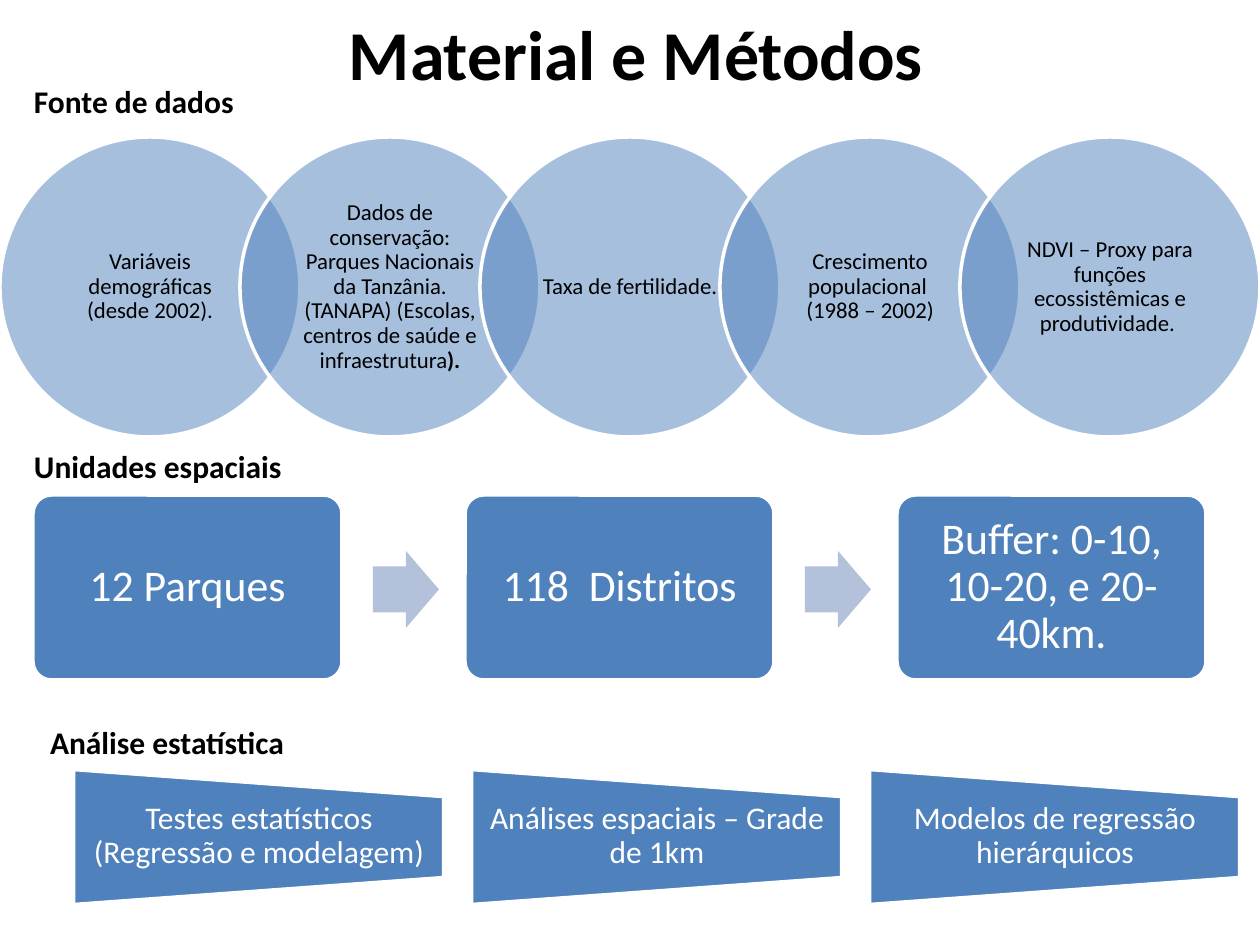
"""Build the "Material e Métodos" slide: data sources, spatial units and analysis."""
from dataclasses import dataclass

from lxml import etree
from pptx import Presentation
from pptx import util as u
from pptx.dml.color import RGBColor
from pptx.enum import shapes, text
from pptx.oxml.ns import qn
from pptx.shapes.autoshape import Shape
from pptx.slide import Slide

PX_PER_INCH = 126
BLUE = RGBColor(0x4F, 0x81, 0xBD)
PALE_BLUE = RGBColor(0xB3, 0xC1, 0xDB)
WHITE = RGBColor(0xFF, 0xFF, 0xFF)
BLACK = RGBColor(0x00, 0x00, 0x00)
FONT = "Calibri"


@dataclass(frozen=True)
class Box:
    left: int
    top: int
    width: int
    height: int

    def emu(self) -> tuple[int, ...]:
        return tuple(px(n) for n in (self.left, self.top, self.width, self.height))

    def moved(self, distance: int) -> "Box":
        return Box(self.left + distance, self.top, self.width, self.height)

    def turned(self) -> "Box":
        shift = (self.width - self.height) // 2
        return Box(self.left + shift, self.top - shift, self.height, self.width)


@dataclass(frozen=True)
class Heading:
    words: str
    box: Box


HEADINGS = (
    Heading("Fonte de dados", Box(21, 76, 227, 50)),
    Heading("Unidades espaciais", Box(21, 441, 282, 50)),
    Heading("Análise estatística", Box(37, 717, 261, 50)),
)
TITLE = Box(336, 4, 622, 97)
CIRCLE, CIRCLE_STEP = Box(0, 137, 300, 300), 240
UNIT, UNIT_STEP = Box(33, 495, 309, 185), 432
ARROW = Box(373, 551, 66, 77)
METHOD, METHOD_STEP = Box(74, 769, 370, 135), 398
METHOD_TEXT = Box(74, 796, 370, 81)

SOURCES = (
    ("Variáveis demográficas (desde 2002).", ""),
    ("Dados de conservação: Parques Nacionais da Tanzânia. (TANAPA) "
     "(Escolas, centros de saúde e infraestrutura", ")."),
    ("Taxa de fertilidade.", ""),
    ("Crescimento populacional  (1988 – 2002)", ""),
    ("NDVI – Proxy para funções ecossistêmicas e produtividade. ", ""),
)
UNITS = ("12 Parques", "118  Distritos", "Buffer: 0-10, 10-20, e 20-40km.")
METHODS = (
    "Testes estatísticos (Regressão e modelagem)",
    "Análises espaciais – Grade de 1km",
    "Modelos de regressão hierárquicos",
)


def px(length: int) -> int:
    return u.Inches(length / PX_PER_INCH)


def write(shape: Shape, words: str, *, size: int, color: RGBColor = BLACK,
          bold: bool = False, bold_end: str = "", centered: bool = True,
          inset: tuple[int, int] = (13, 6)) -> None:
    frame = shape.text_frame
    frame.auto_size = text.MSO_AUTO_SIZE.NONE
    frame.word_wrap = centered
    frame.vertical_anchor = text.MSO_ANCHOR.MIDDLE if centered else text.MSO_ANCHOR.TOP
    frame.margin_left = frame.margin_right = px(inset[0])
    frame.margin_top = frame.margin_bottom = px(inset[1])
    paragraph = frame.paragraphs[0]
    paragraph.alignment = text.PP_ALIGN.CENTER if centered else text.PP_ALIGN.LEFT
    paragraph.line_spacing = 0.9 if centered else 1.0
    for part, is_bold in ((words, bold), (bold_end, True)):
        if part:
            run = paragraph.add_run()
            run.text = part
            run.font.name = FONT
            run.font.size = u.Pt(size)
            run.font.bold = is_bold
            run.font.color.rgb = color


def add_preset(slide: Slide, kind: shapes.MSO_SHAPE, box: Box, *,
               fill: RGBColor = BLUE, outlined: bool = True) -> Shape:
    shape = slide.shapes.add_shape(kind, *box.emu())
    shape.shadow.inherit = False
    shape.fill.solid()
    shape.fill.fore_color.rgb = fill
    if outlined:
        shape.line.color.rgb = WHITE
        shape.line.width = u.Pt(2)
    else:
        shape.line.fill.background()
    return shape


def set_alpha(shape: Shape, percent: int) -> None:
    color = shape.fill._xPr.find(qn("a:solidFill"))[0]
    etree.SubElement(color, qn("a:alpha")).set("val", str(percent * 1000))


def add_sources(slide: Slide) -> None:
    for index, (words, bold_end) in enumerate(SOURCES):
        circle = add_preset(slide, shapes.MSO_SHAPE.OVAL, CIRCLE.moved(index * CIRCLE_STEP))
        set_alpha(circle, 50)
        write(circle, words, size=13, bold_end=bold_end, inset=(16, 3))


def add_units(slide: Slide) -> None:
    for index, words in enumerate(UNITS):
        shift = index * UNIT_STEP
        unit = add_preset(slide, shapes.MSO_SHAPE.ROUNDED_RECTANGLE, UNIT.moved(shift))
        unit.adjustments[0] = 0.1
        write(unit, words, size=25, color=WHITE, inset=(13, 13))
        if index < len(UNITS) - 1:
            arrow = add_preset(slide, shapes.MSO_SHAPE.RIGHT_ARROW, ARROW.moved(shift),
                               fill=PALE_BLUE, outlined=False)
            arrow.adjustments[0] = 0.6


def add_methods(slide: Slide) -> None:
    for index, words in enumerate(METHODS):
        shift = index * METHOD_STEP
        method = add_preset(slide, shapes.MSO_SHAPE.FLOWCHART_MANUAL_OPERATION,
                            METHOD.moved(shift).turned())
        method.rotation = 270
        label = slide.shapes.add_textbox(*METHOD_TEXT.moved(shift).emu())
        write(label, words, size=18, color=WHITE, inset=(15, 0))


def main() -> None:
    presentation = Presentation()
    presentation.slide_width = u.Inches(10)
    presentation.slide_height = u.Inches(7.5)
    slide = presentation.slides.add_slide(presentation.slide_layouts.get_by_name("Title Only"))
    title = slide.shapes.title
    title.left, title.top, title.width, title.height = TITLE.emu()
    write(title, "Material e Métodos", size=40, bold=True, centered=False)
    add_sources(slide)
    add_units(slide)
    add_methods(slide)
    for heading in HEADINGS:
        label = slide.shapes.add_textbox(*heading.box.emu())
        write(label, heading.words, size=18, bold=True, centered=False)
    presentation.save("out.pptx")


if __name__ == "__main__":
    main()
